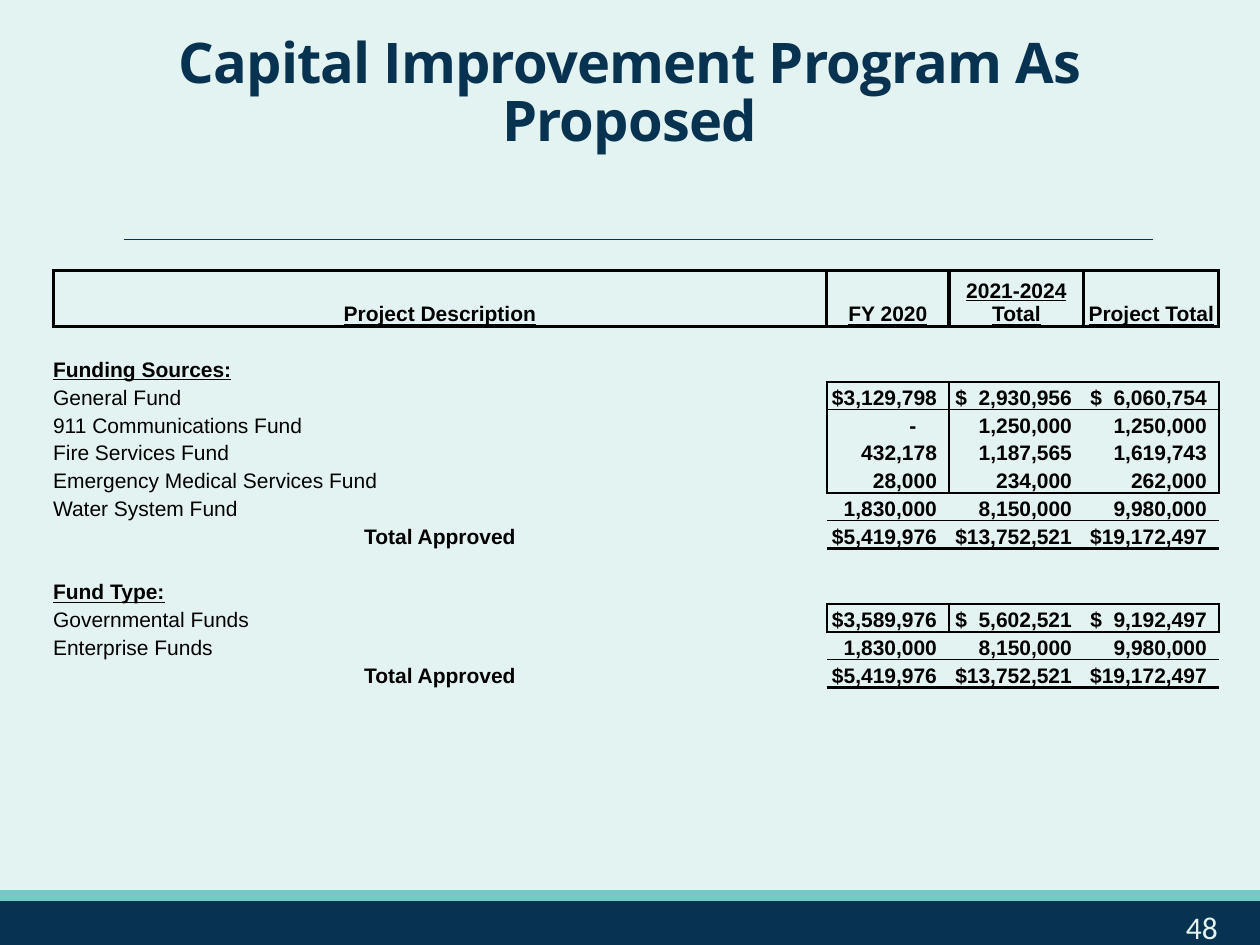
import pptx
import pptx.util
import pptx.dml.color
import pptx.enum.shapes
import pptx.enum.text
import pptx.oxml.ns
import lxml.etree

Cm = pptx.util.Cm
Pt = pptx.util.Pt
ALIGN = pptx.enum.text.PP_ALIGN
qn = pptx.oxml.ns.qn
NAVY, TEAL, PALE, BLACK = "083350", "72CAC4", "E3F3F1", "000000"


def color(value):
    return pptx.dml.color.RGBColor.from_string(value)


def format_text(para, font_name, size, value, bold=False, underline=False):
    for span in para.runs:
        span.font.name = font_name
        span.font.size = Pt(size)
        span.font.color.rgb = color(value)
        span.font.bold = bold
        span.font.underline = underline


deck = pptx.Presentation()
deck.slide_width, deck.slide_height = Cm(25.4), Cm(19.05)
page = deck.slides.add_slide(deck.slide_layouts[6])
page.background.fill.solid()
page.background.fill.fore_color.rgb = color(PALE)

for top, height, value in [(18.16, 1.27, NAVY), (17.96, 0.18, TEAL)]:
    band = page.shapes.add_shape(
        pptx.enum.shapes.MSO_SHAPE.RECTANGLE, 0, Cm(top), deck.slide_width, Cm(height))
    band.shadow.inherit = False
    band.fill.solid()
    band.fill.fore_color.rgb = color(value)
    band.line.color.rgb = color(value)
    band.line.width = Pt(1.25)

divider = page.shapes.add_connector(
    pptx.enum.shapes.MSO_CONNECTOR.STRAIGHT, Cm(2.49), Cm(4.83), Cm(23.24), Cm(4.83))
divider.line.color.rgb = color(NAVY)
divider.line.width = Pt(0.5)
lxml.etree.SubElement(divider._element.spPr, qn("a:effectLst"))

title = page.shapes.add_textbox(Cm(0.84), Cm(1.09), Cm(23.7), Cm(2.11))
title.text_frame.word_wrap = True
title.text_frame.vertical_anchor = pptx.enum.text.MSO_ANCHOR.BOTTOM
title.text_frame.text = "Capital Improvement Program As Proposed"
para = title.text_frame.paragraphs[0]
para.alignment = ALIGN.CENTER
para.line_spacing = 0.85
format_text(para, "Open Sans", 32, NAVY, bold=True)
para.runs[0].font._element.set("spc", "-50")

number = page.shapes.add_textbox(Cm(23.06), Cm(18.19), Cm(2.34), Cm(1.09))
number.text_frame.word_wrap = True
number.text_frame.text = "48"
para = number.text_frame.paragraphs[0]
para.alignment = ALIGN.CENTER
format_text(para, "Calibri", 18, PALE)

borders = {
    "header": {"L": 2, "R": 2, "T": 2, "B": 2},
    "heading": {"B": 1},
    "first": {"L": 1, "R": 1, "T": 1},
    "middle": {"L": 1, "R": 1},
    "last": {"L": 1, "R": 1, "B": 1},
    "single": {"L": 1, "R": 1, "T": 1, "B": 1},
    "plain": {"T": 1, "B": 0.5},
    "total": {"T": 0.5, "B": 2},
    "gap": {},
}
blank = ["", "", "", ""]
water = ["1,830,000", "8,150,000", "9,980,000"]
total = ["Total Approved", "$5,419,976", "$13,752,521", "$19,172,497"]
rows = [
    ("header", ["Project Description", "FY 2020", "2021-2024 Total", "Project Total"]),
    ("gap", blank),
    ("heading", ["Funding Sources:", "", "", ""]),
    ("first", ["General Fund", "$3,129,798", "$\t2,930,956", "$\t6,060,754"]),
    ("middle", ["911 Communications Fund", "-", "1,250,000", "1,250,000"]),
    ("middle", ["Fire Services Fund", "432,178", "1,187,565", "1,619,743"]),
    ("last", ["Emergency Medical Services Fund", "28,000", "234,000", "262,000"]),
    ("plain", ["Water System Fund"] + water),
    ("total", total),
    ("gap", blank),
    ("heading", ["Fund Type:", "", "", ""]),
    ("single", ["Governmental Funds", "$3,589,976", "$\t5,602,521", "$\t9,192,497"]),
    ("plain", ["Enterprise Funds"] + water),
    ("total", total),
    ("gap", blank),
]
widths = [15.6, 2.46, 2.72, 2.72]
frame = page.shapes.add_table(len(rows), 4, Cm(1.07), Cm(5.46), Cm(23.5), Cm(8.96))
table = frame.table
table.first_row = False
table.horz_banding = False
style = table._tbl.tblPr.find(qn("a:tableStyleId"))
style.text = "{2D5ABB26-0587-4C30-8999-92F81FD0307C}"
for column, width in zip(table.columns, widths):
    column.width = Cm(width)

for row_index, (kind, texts) in enumerate(rows):
    table.rows[row_index].height = Cm(1.12 if kind == "header" else 0.56)
    for column_index, text in enumerate(texts):
        cell = table.cell(row_index, column_index)
        cell.margin_left = cell.margin_right = cell.margin_top = cell.margin_bottom = 0
        cell.vertical_anchor = pptx.enum.text.MSO_ANCHOR.BOTTOM
        cell.text_frame.text = text
        para = cell.text_frame.paragraphs[0]
        is_label = column_index == 0
        if kind == "header" or (kind == "total" and is_label):
            para.alignment = ALIGN.CENTER
        elif "\t" in text:
            cell.margin_left = Cm(0.13)
            tabs = lxml.etree.SubElement(para._p.get_or_add_pPr(), qn("a:tabLst"))
            lxml.etree.SubElement(
                tabs, qn("a:tab"), pos=str(Cm(widths[column_index] - 0.37)), algn="r")
        elif not is_label:
            para.alignment = ALIGN.RIGHT
            cell.margin_right = Cm(0.66 if text == "-" else 0.24)
        strong = not is_label or kind in ("header", "heading", "total")
        format_text(para, "Arial", 12, BLACK, strong, kind in ("header", "heading"))
        if not text:
            lxml.etree.SubElement(para._p, qn("a:endParaRPr"), sz="1200")

        properties = cell._tc.get_or_add_tcPr()
        for side, points in borders[kind].items():
            inner = (side == "L" and column_index != 1) or (side == "R" and column_index != 3)
            if kind != "header" and (is_label or inner):
                continue
            edge = lxml.etree.SubElement(properties, qn("a:ln" + side), w=str(Pt(points)))
            fill = lxml.etree.SubElement(edge, qn("a:solidFill"))
            lxml.etree.SubElement(fill, qn("a:srgbClr"), val=BLACK)
        cell.fill.background()

deck.save("out.pptx")
